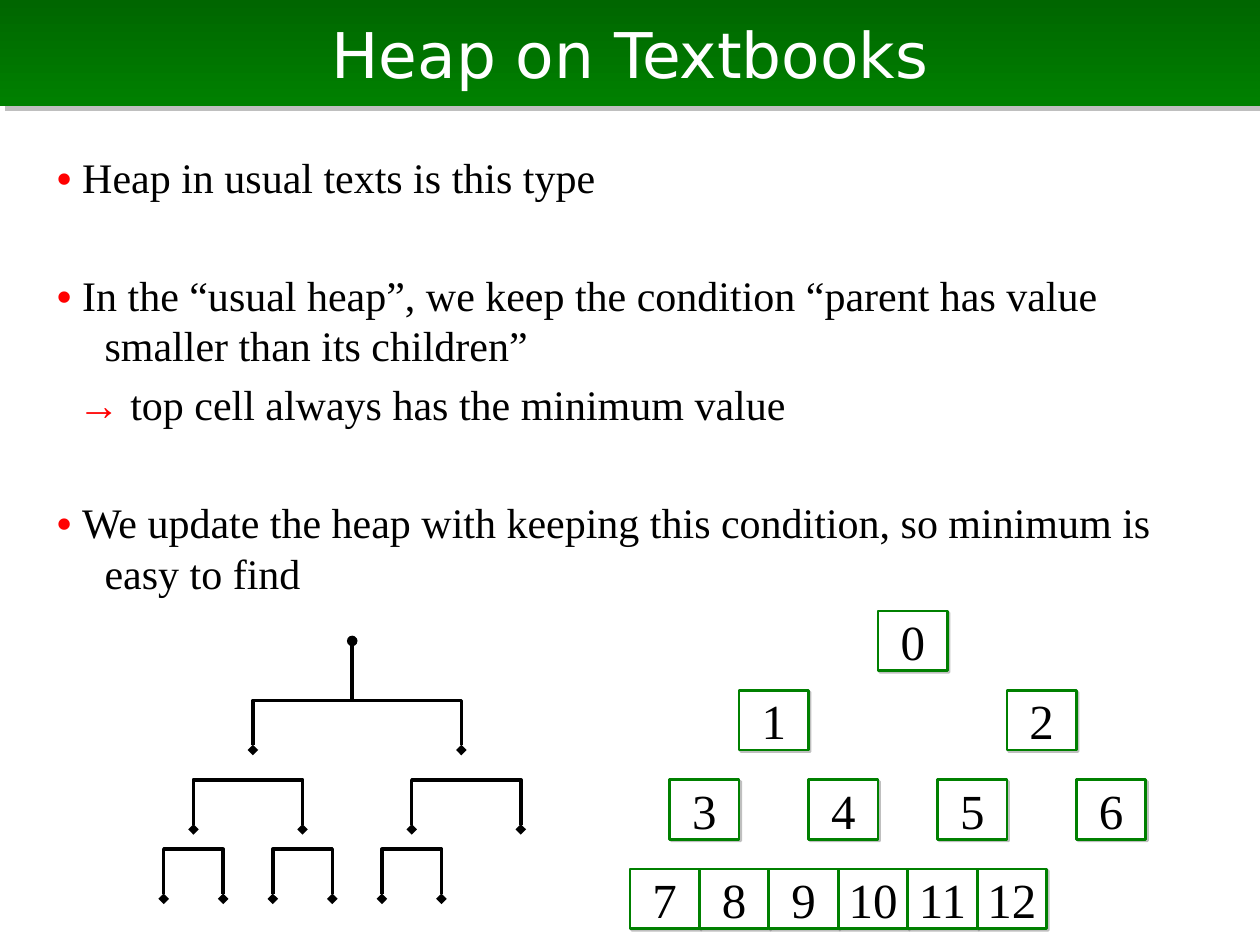
from pptx import Presentation
from pptx.dml.color import RGBColor as RGB
from pptx.enum.shapes import MSO_CONNECTOR as LINK, MSO_SHAPE as SHAPE
from pptx.enum.text import MSO_ANCHOR as ANCHOR, MSO_AUTO_SIZE as FIT, PP_ALIGN as ALIGN
from pptx.oxml import parse_xml
from pptx.oxml.ns import nsdecls, qn
from pptx.util import Cm, Pt

COLORS = {
    "dark": "006600",
    "green": "008000",
    "red": "FF0000",
    "black": "000000",
    "white": "FFFFFF",
    "shade": "808080",
}
SANS, SERIF = "DejaVu Sans", "Times New Roman"


def color(name):
    return RGB.from_string(COLORS[name])


def write(par, text, size=24, font=SERIF, ink="black", bold=False, align=None):
    run = par.add_run()
    run.text = text
    run.font.size, run.font.name, run.font.bold = Pt(size), font, bold
    run.font.color.rgb = color(ink)
    if align is not None:
        par.alignment = align


class Deck:
    line = 2        # tree line width, pt
    edge = 1.5      # box border width, pt
    cell = (1.4, 1.2)  # box size, cm

    def __init__(self, slide):
        self.slide = slide
        self.shapes = slide.shapes

    def shade(self, shape, dist):
        shape.shadow.inherit = False
        effects = shape._element.spPr.find(qn("a:effectLst"))
        effects.append(parse_xml(
            f'<a:outerShdw {nsdecls("a")} blurRad="0" dist="{Pt(dist)}" '
            f'dir="2700000" algn="ctr" rotWithShape="0">'
            f'<a:srgbClr val="{COLORS["shade"]}"><a:alpha val="50000"/></a:srgbClr>'
            f'</a:outerShdw>'))

    def ends(self, line, **kinds):
        for tag, kind in kinds.items():
            line._get_or_add_ln().append(
                parse_xml(f'<a:{tag} {nsdecls("a")} type="{kind}"/>'))

    def stroke(self, shape):
        shape.line.color.rgb = color("black")
        shape.line.width = Pt(self.line)

    def title(self, text):
        bar = self.shapes.title
        bar.left, bar.top, bar.width, bar.height = Cm(0), Cm(0), Cm(25.4), Cm(2.13)
        bar.fill.gradient()
        bar.fill.gradient_angle = 270
        for stop, name in zip(bar.fill.gradient_stops, ("dark", "green")):
            stop.color.rgb = color(name)
        self.shade(bar, 4.2)
        frame = bar.text_frame
        frame.auto_size, frame.vertical_anchor = FIT.NONE, ANCHOR.MIDDLE
        write(frame.paragraphs[0], text, size=36, font=SANS, ink="white",
              align=ALIGN.CENTER)

    def points(self, items, left, top, width, height):
        box = self.shapes.add_textbox(Cm(left), Cm(top), Cm(width), Cm(height))
        frame = box.text_frame
        frame.word_wrap = True
        for i, (mark, text, hang, gap) in enumerate(items):
            par = frame.paragraphs[0] if i == 0 else frame.add_paragraph()
            par.space_before, par.line_spacing = Pt(gap), Pt(29.1)
            props = par._p.get_or_add_pPr()
            props.set("marL", str(Cm(0.96)))
            props.set("indent", str(-Cm(hang)))
            write(par, mark + " ", ink="red", bold=True)
            write(par, text)

    def fork(self, left, top, width, drop=1):
        right, low = left + width, top + drop
        pen = self.shapes.build_freeform(Cm(left), Cm(low))
        pen.add_line_segments(
            [(Cm(x), Cm(y)) for x, y in ((left, top), (right, top), (right, low))],
            close=False)
        shape = pen.convert_to_shape()
        shape.fill.background()
        shape.shadow.inherit = False
        self.stroke(shape)
        self.ends(shape.line, headEnd="diamond", tailEnd="diamond")

    def stem(self, x, low, top):
        link = self.shapes.add_connector(LINK.STRAIGHT, Cm(x), Cm(low), Cm(x), Cm(top))
        self.stroke(link)
        self.ends(link.line, tailEnd="oval")
        link._element.spPr.append(parse_xml(f'<a:effectLst {nsdecls("a")}/>'))

    def box(self, text, left, top):
        wide, high = self.cell
        shape = self.shapes.add_shape(
            SHAPE.RECTANGLE, Cm(left), Cm(top), Cm(wide), Cm(high))
        shape.fill.solid()
        shape.fill.fore_color.rgb = color("white")
        shape.line.color.rgb = color("green")
        shape.line.width = Pt(self.edge)
        self.shade(shape, 1.4)
        frame = shape.text_frame
        frame.word_wrap, frame.vertical_anchor = False, ANCHOR.MIDDLE
        write(frame.paragraphs[0], text, size=28, align=ALIGN.CENTER)


def main():
    prs = Presentation()
    prs.slide_width, prs.slide_height = Cm(25.4), Cm(19.05)
    deck = Deck(prs.slides.add_slide(prs.slide_layouts[5]))

    # Title bar
    deck.title("Heap on Textbooks")

    # Text: mark, wording, hanging indent in cm, space before in pt
    deck.points([
        ("•", "Heap in usual texts is this type", 0.96, 0),
        ("•", "In the “usual heap”, we keep the condition “parent has value "
              "smaller than its children”", 0.96, 38),
        ("→", "top cell always has the minimum value", 0.54, 4.6),
        ("•", "We update the heap with keeping this condition, so minimum is "
              "easy to find", 0.96, 38),
    ], 0.9, 2.92, 23, 8.2)

    # Tree, from the leaves up to the root
    forks = [
        (17.12, 1.2, (3.3, 5.5, 7.7)),
        (15.72, 2.2, (3.9, 8.3)),
        (14.12, 4.2, (5.1,)),
    ]
    for top, width, lefts in forks:
        for left in lefts:
            deck.fork(left, top, width)
    deck.stem(7.1, 14.12, 12.92)

    # Numbered heap cells, level by level
    levels = [
        (12.32, [17.7]),
        (13.92, [14.9, 20.3]),
        (15.72, [13.5, 16.3, 18.9, 21.7]),
        (17.52, [12.7 + deck.cell[0] * i for i in range(6)]),
    ]
    cells = [(left, top) for top, lefts in levels for left in lefts]
    for num, (left, top) in enumerate(cells):
        deck.box(str(num), left, top)

    prs.save("out.pptx")


if __name__ == "__main__":
    main()
